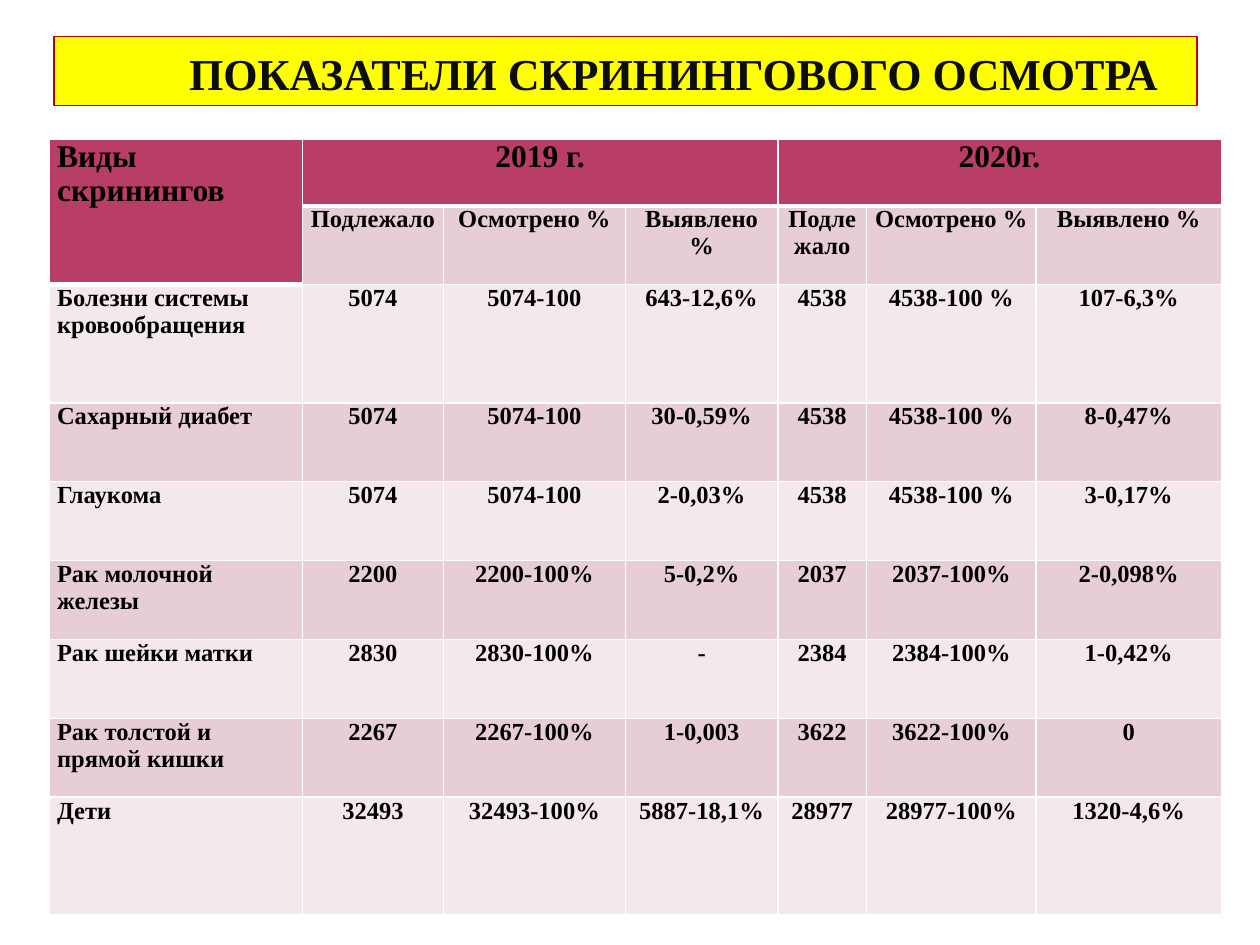
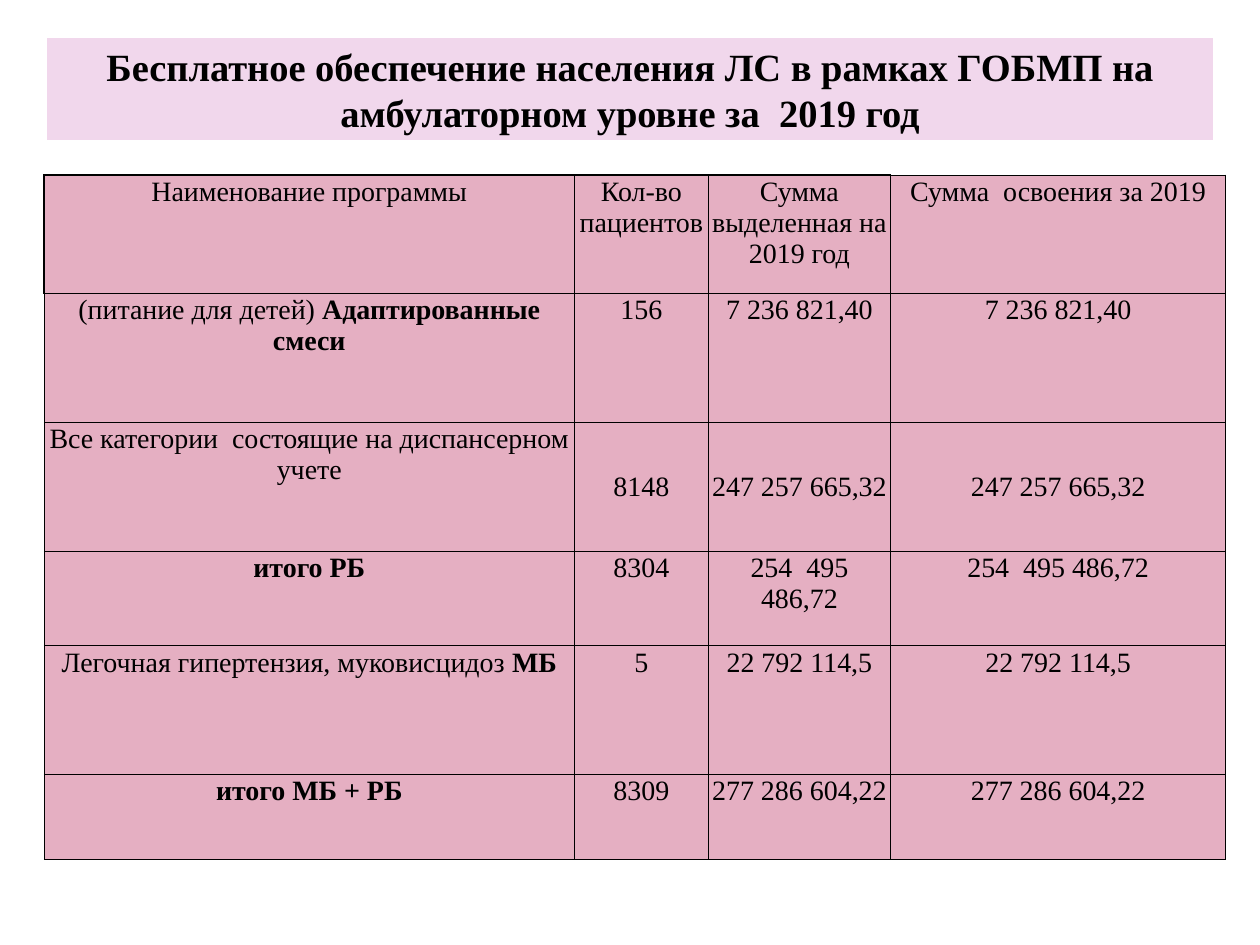
from dataclasses import dataclass, field
from typing import NamedTuple, Union

from lxml import etree
from pptx import Presentation
from pptx.dml.color import RGBColor
from pptx.enum.text import MSO_ANCHOR as Anchor, MSO_AUTO_SIZE as AutoSize, PP_ALIGN as Align
from pptx.oxml.ns import qn
from pptx.util import Cm, Pt

FONT = "Times New Roman"
COLORS = {
    "ink": "000000",
    "title_ink": "0D0D0D",
    "white": "FFFFFF",
    "yellow": "FFFF00",
    "red": "C00000",
    "lilac": "F1D7EC",
    "header": "B83D68",
    "band_dark": "E6CED4",
    "band_light": "F3E8EB",
    "rose": "E5AFC2",
}


class Run(NamedTuple):
    text: str
    bold: bool = False


class Box(NamedTuple):
    left: float
    top: float
    width: float
    height: float


Content = Union[str, tuple[Run, ...]]
Position = tuple[int, int]


@dataclass
class TitleBand:
    text: str
    box: Box
    fill: str
    line: str
    line_width: float
    size: float
    color: str = "ink"
    align: Align = Align.CENTER
    margins: tuple[float, float, float, float] = (0.25, 0.13, 0.25, 0.13)


@dataclass
class CellLook:
    fill: str
    size: float
    bold: bool = False
    align: Align = Align.CENTER
    anchor: Anchor = Anchor.TOP
    space_after: float = 0


@dataclass
class TableSpec:
    left: float
    top: float
    columns: list[float]
    heights: list[float]
    rows: list[list[Content]]
    looks: dict[Position, CellLook]
    margins: tuple[float, float, float, float]
    border: str
    border_width: float
    heavy: dict[Position, dict[str, float]] = field(default_factory=dict)
    merges: list[tuple[Position, Position]] = field(default_factory=list)


def rgb(name: str) -> RGBColor:
    return RGBColor.from_string(COLORS[name])


def write(frame, content: Content, *, size: float, color: str = "ink", bold: bool = False,
          align: Align = Align.CENTER, space_after: float = 0) -> None:
    paragraph = frame.paragraphs[0]
    paragraph.alignment = align
    paragraph.space_before = Pt(0)
    paragraph.space_after = Pt(space_after)
    parts = (Run(content, bold),) if isinstance(content, str) else content
    for part in parts:
        run = paragraph.add_run()
        run.text = part.text
        run.font.name = FONT
        run.font.size = Pt(size)
        run.font.bold = part.bold
        run.font.color.rgb = rgb(color)


def set_margins(target, margins: tuple[float, float, float, float]) -> None:
    (target.margin_left, target.margin_top,
     target.margin_right, target.margin_bottom) = map(Cm, margins)


def set_borders(cell, color: str, widths: dict[str, float]) -> None:
    properties = cell._tc.get_or_add_tcPr()
    for edge in "LRTB":
        line = etree.SubElement(properties, qn(f"a:ln{edge}"), w=str(Pt(widths[edge])))
        fill = etree.SubElement(line, qn("a:solidFill"))
        etree.SubElement(fill, qn("a:srgbClr"), val=COLORS[color])


def add_title(slide, band: TitleBand) -> None:
    title = slide.shapes.title
    title.left, title.top, title.width, title.height = map(Cm, band.box)
    title.fill.solid()
    title.fill.fore_color.rgb = rgb(band.fill)
    title.line.color.rgb = rgb(band.line)
    title.line.width = Pt(band.line_width)
    frame = title.text_frame
    frame.word_wrap = True
    frame.auto_size = AutoSize.NONE
    frame.vertical_anchor = Anchor.MIDDLE
    set_margins(frame, band.margins)
    write(frame, band.text, size=band.size, color=band.color, bold=True, align=band.align)


def add_grid(slide, spec: TableSpec) -> None:
    table = slide.shapes.add_table(
        len(spec.rows), len(spec.columns), Cm(spec.left), Cm(spec.top),
        Cm(sum(spec.columns)), Cm(sum(spec.heights))).table
    table.first_row = table.horz_banding = False
    for column, width in zip(table.columns, spec.columns):
        column.width = Cm(width)
    for row, height in zip(table.rows, spec.heights):
        row.height = Cm(height)
    for start, end in spec.merges:
        table.cell(*start).merge(table.cell(*end))
    for r, row in enumerate(spec.rows):
        for c, content in enumerate(row):
            cell, look = table.cell(r, c), spec.looks[r, c]
            widths = dict.fromkeys("LRTB", spec.border_width) | spec.heavy.get((r, c), {})
            set_borders(cell, spec.border, widths)
            cell.fill.solid()
            cell.fill.fore_color.rgb = rgb(look.fill)
            if cell.is_spanned:
                continue
            set_margins(cell, spec.margins)
            cell.vertical_anchor = look.anchor
            write(cell.text_frame, content, size=look.size, bold=look.bold,
                  align=look.align, space_after=look.space_after)


def screening_table() -> TableSpec:
    measures = ["Подлежало", "Осмотрено %", "Выявлено %"]
    rows = [
        ["Виды скринингов", "2019 г.", "", "", "2020г.", "", ""],
        ["", *measures, *measures],
        ["Болезни системы кровообращения", "5074", "5074-100", "643-12,6%",
         "4538", "4538-100 %", "107-6,3%"],
        ["Сахарный диабет", "5074", "5074-100", "30-0,59%", "4538", "4538-100 %", "8-0,47%"],
        ["Глаукома", "5074", "5074-100", "2-0,03%", "4538", "4538-100 %", "3-0,17%"],
        ["Рак молочной железы", "2200", "2200-100%", "5-0,2%", "2037", "2037-100%", "2-0,098%"],
        ["Рак шейки матки", "2830", "2830-100%", "-", "2384", "2384-100%", "1-0,42%"],
        ["Рак толстой и прямой кишки", "2267", "2267-100%", "1-0,003",
         "3622", "3622-100%", "0"],
        ["Дети", "32493", "32493-100%", "5887-18,1%", "28977", "28977-100%", "1320-4,6%"],
    ]
    looks, heavy = {}, {}
    for r, row in enumerate(rows):
        for c in range(len(row)):
            is_header = r == 0 or (r == 1 and c == 0)
            band = "band_dark" if r % 2 else "band_light"
            looks[r, c] = CellLook(
                fill="header" if is_header else band,
                size=18 if is_header else 14,
                bold=True,
                align=Align.CENTER if c else Align.LEFT,
                space_after=10)
    for c in range(7):
        last_header_row = 0 if c else 1
        heavy[last_header_row, c] = {"B": 3}
        heavy[last_header_row + 1, c] = {"T": 3}
    heavy[0, 0] = {"B": 3}
    return TableSpec(
        left=1, top=2.8,
        columns=[5.1, 2.84, 3.67, 3.07, 1.79, 3.42, 3.73],
        heights=[1.35, 1.59, 2.38, *[1.59] * 5, 2.38],
        rows=rows, looks=looks, margins=(0.15, 0, 0.15, 0),
        border="white", border_width=1, heavy=heavy,
        merges=[((0, 0), (1, 0)), ((0, 1), (0, 3)), ((0, 4), (0, 6))])


def medicines_table() -> TableSpec:
    rows = [
        ["Наименование программы", "Кол-во пациентов", "Сумма выделенная на 2019 год",
         "Сумма  освоения за 2019"],
        [(Run("(питание для детей) "), Run("Адаптированные смеси", True)),
         "156", "7 236 821,40", "7 236 821,40"],
        ["Все категории  состоящие на диспансерном учете",
         "8148", "247 257 665,32", "247 257 665,32"],
        [(Run("итого РБ", True),), "8304", "254  495 486,72", "254  495 486,72"],
        [(Run("Легочная гипертензия, муковисцидоз "), Run("МБ", True)),
         "5", "22 792 114,5", "22 792 114,5"],
        [(Run("итого МБ + РБ", True),), "8309", "277 286 604,22", "277 286 604,22"],
    ]
    registered_row = 2
    looks = {
        (r, c): CellLook(fill="rose", size=16,
                         anchor=Anchor.MIDDLE if r == registered_row and c else Anchor.TOP)
        for r, row in enumerate(rows) for c in range(len(row))}
    outline = {"L": 1, "T": 1, "R": 1}
    return TableSpec(
        left=0.89, top=3.53,
        columns=[10.69, 2.7, 3.67, 6.76],
        heights=[2.38, 2.6, 2.6, 1.91, 2.59, 1.71],
        rows=rows, looks=looks, margins=(0.03, 0.03, 0.03, 0),
        border="ink", border_width=0.5,
        heavy={(0, 0): outline, (0, 1): outline, (0, 2): outline | {"R": 0.5}})


def main() -> None:
    deck = Presentation()
    deck.slide_width, deck.slide_height = Cm(25.4), Cm(19.05)
    title_only = deck.slide_layouts[5]
    screening_title = TitleBand(
        "ПОКАЗАТЕЛИ СКРИНИНГОВОГО ОСМОТРА", Box(1.09, 0.73, 23.04, 1.4),
        fill="yellow", line="red", line_width=0.75, size=25.2, color="title_ink",
        align=Align.LEFT, margins=(2.72, 0.08, 0.1, 0))
    medicines_title = TitleBand(
        "Бесплатное обеспечение населения ЛС в рамках ГОБМП на амбулаторном уровне за  2019 год",
        Box(0.9, 0.73, 23.6, 2.13), fill="lilac", line="white", line_width=2.5, size=22)
    for band, grid in ((screening_title, screening_table()),
                       (medicines_title, medicines_table())):
        slide = deck.slides.add_slide(title_only)
        add_title(slide, band)
        add_grid(slide, grid)
    deck.save("out.pptx")


if __name__ == "__main__":
    main()
